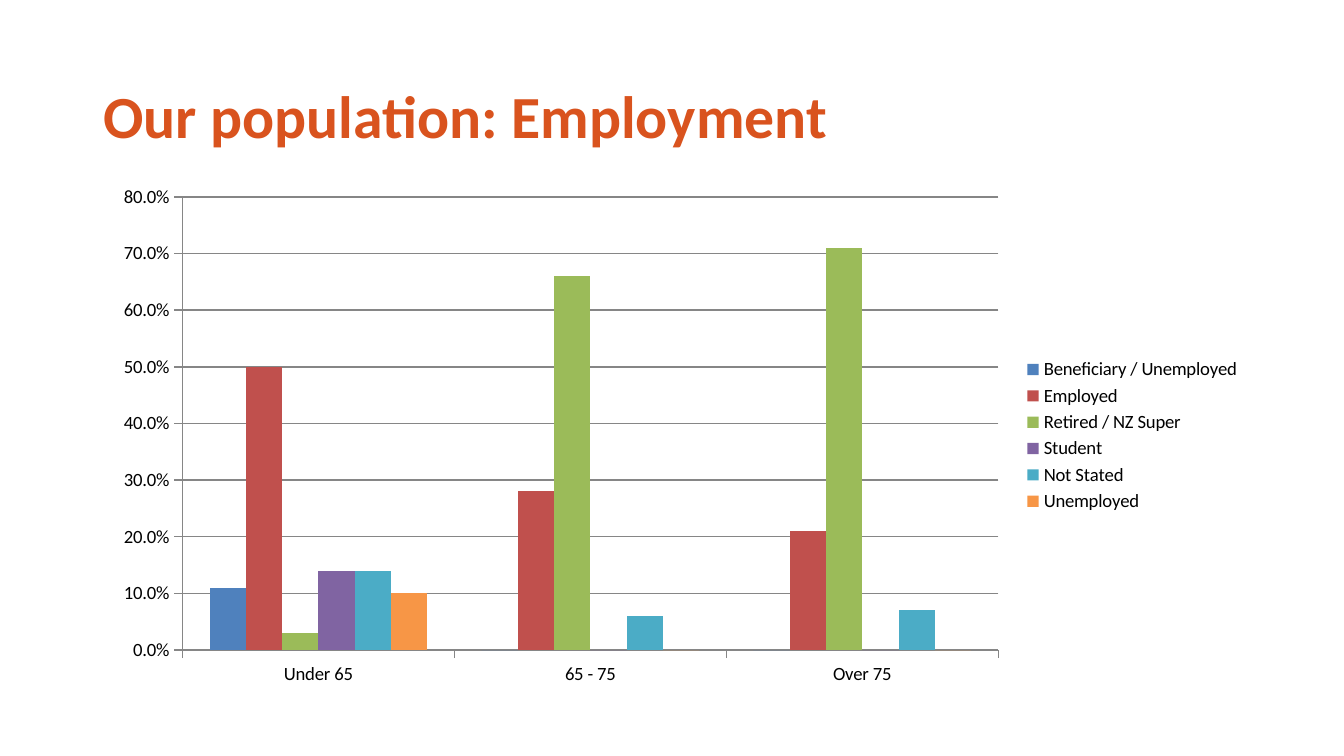
from pptx import Presentation
from pptx.chart.data import CategoryChartData
from pptx.dml.color import RGBColor
from pptx.enum import chart as ch, text
from pptx.util import Inches, Pt

FONT = "Calibri"
ORANGE = RGBColor(0xD9, 0x53, 0x1E)
BLACK = RGBColor(0, 0, 0)
GREY = RGBColor(0x86, 0x86, 0x86)
BLUE = RGBColor(0x4F, 0x81, 0xBD)
RED = RGBColor(0xC0, 0x50, 0x4D)
GREEN = RGBColor(0x9B, 0xBB, 0x59)
PURPLE = RGBColor(0x80, 0x64, 0xA2)
TEAL = RGBColor(0x4B, 0xAC, 0xC6)
AMBER = RGBColor(0xF7, 0x96, 0x46)

# Share of each age group by employment status
AGES = ["Under 65", "65 - 75", "Over 75"]
STATUS = [
    ("Beneficiary / Unemployed", (0.11, 0, 0), BLUE),
    ("Employed", (0.5, 0.28, 0.21), RED),
    ("Retired / NZ Super", (0.03, 0.66, 0.71), GREEN),
    ("Student", (0.14, 0, 0), PURPLE),
    ("Not Stated ", (0.14, 0.06, 0.07), TEAL),
    ("Unemployed", (0.1, 0, 0), AMBER),
]

# Widescreen slide, 16 to 9
prs = Presentation()
prs.slide_width = Inches(10)
prs.slide_height = Inches(10 * 9 / 16)
slide = prs.slides.add_slide(prs.slide_layouts[5])

# Title
title = slide.shapes.title
title.left, title.top = Inches(0.67), Inches(0.47)
title.width, title.height = Inches(7.4), Inches(0.77)
frame = title.text_frame
frame.word_wrap = True
frame.vertical_anchor = text.MSO_ANCHOR.MIDDLE
para = frame.paragraphs[0]
para.alignment = text.PP_ALIGN.LEFT
run = para.add_run()
run.text = "Our population: Employment"
run.font.name, run.font.size, run.font.bold = FONT, Pt(32), True
run.font.color.rgb = ORANGE

# Chart
data = CategoryChartData(number_format="0.0%")
data.categories = AGES
for name, shares, _ in STATUS:
    data.add_series(name, shares)
chart = slide.shapes.add_chart(
    ch.XL_CHART_TYPE.COLUMN_CLUSTERED,
    Inches(0.75), Inches(1.31), Inches(8.58), Inches(3.86), data).chart
chart.has_title = False
chart.font.name, chart.font.size = FONT, Pt(10)
chart.font.color.rgb = BLACK

# Columns
plot = chart.plots[0]
plot.gap_width, plot.overlap = 150, 0
plot.vary_by_categories = False
for series, (_, _, color) in zip(plot.series, STATUS):
    series.format.fill.solid()
    series.format.fill.fore_color.rgb = color

# Axes and gridlines
shares, ages = chart.value_axis, chart.category_axis
shares.minimum_scale, shares.maximum_scale, shares.major_unit = 0, 0.8, 0.1
shares.has_major_gridlines = True
shares.tick_labels.number_format = "0.0%"
shares.tick_labels.number_format_is_linked = False
for axis in (shares, ages):
    axis.major_tick_mark = ch.XL_TICK_MARK.OUTSIDE
    axis.minor_tick_mark = ch.XL_TICK_MARK.NONE
for part in (shares, ages, shares.major_gridlines):
    part.format.line.color.rgb = GREY
    part.format.line.width = Pt(0.75)

# Legend
chart.has_legend = True
chart.legend.position = ch.XL_LEGEND_POSITION.RIGHT
chart.legend.include_in_layout = False

prs.save("out.pptx")
